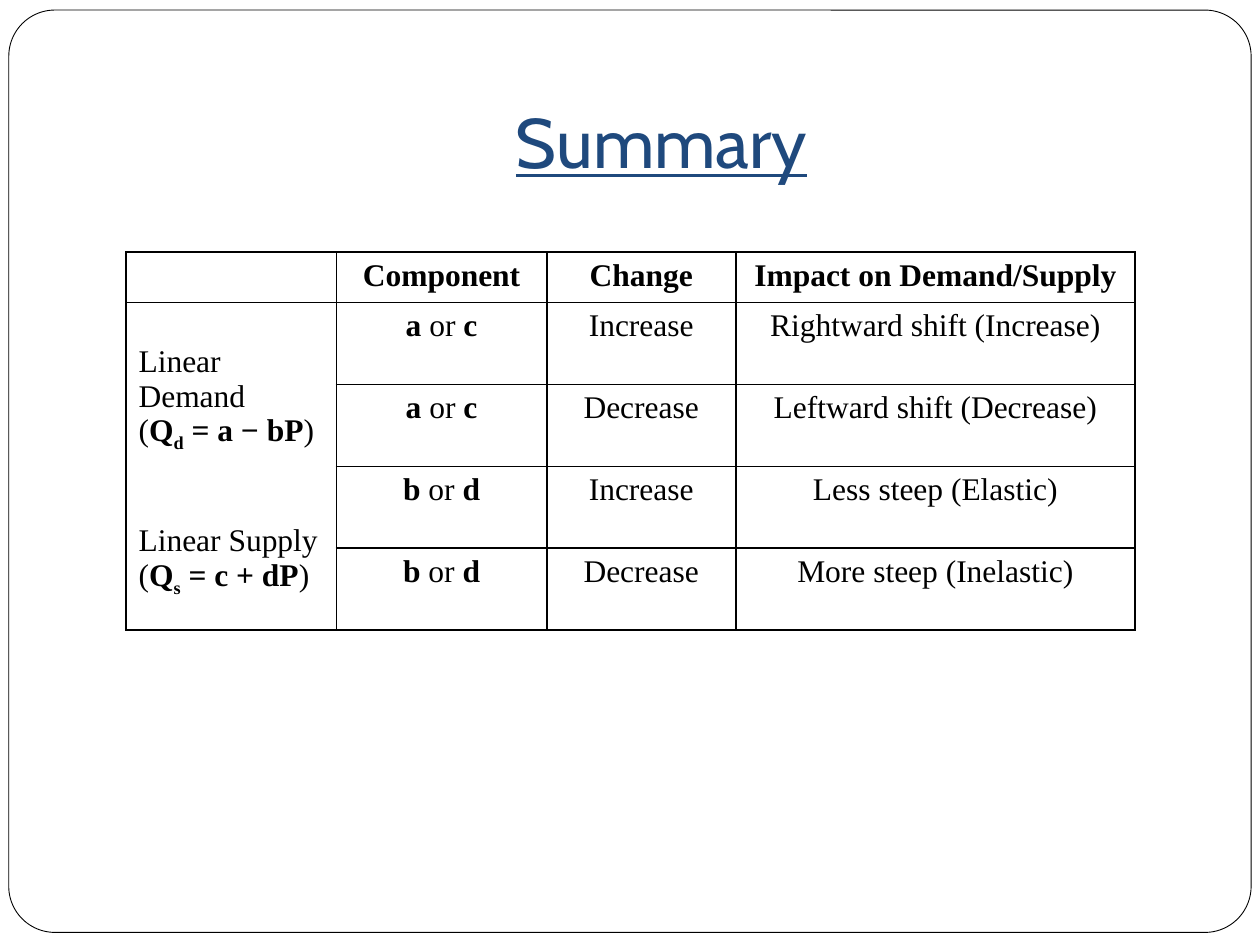
from lxml import etree
from pptx import Presentation
from pptx.dml.color import RGBColor
from pptx.enum.shapes import MSO_SHAPE
from pptx.enum.text import MSO_ANCHOR, PP_ALIGN
from pptx.oxml.ns import qn
from pptx.util import Inches, Pt

ROUNDED = MSO_SHAPE.ROUNDED_RECTANGLE
BOTTOM = MSO_ANCHOR.BOTTOM
LEFT, CENTER = PP_ALIGN.LEFT, PP_ALIGN.CENTER
WHITE = RGBColor(0xFF, 0xFF, 0xFF)
BLACK = RGBColor(0, 0, 0)
NAVY = RGBColor(0x1F, 0x49, 0x7D)

PLAIN, BOLD, SUBSCRIPT = "plain", "bold", "subscript"
HEADINGS = ["Component", "Change", "Impact on Demand/Supply"]
CHANGES = [
    ("a", "c", "Increase", "Rightward shift (Increase)"),
    ("a", "c", "Decrease", "Leftward shift (Decrease)"),
    ("b", "d", "Increase", "Less steep (Elastic)"),
    ("b", "d", "Decrease", "More steep (Inelastic)"),
]
EQUATIONS = [("Linear Demand", "d", " = a − bP"), ("Linear Supply", "s", " = c + dP")]


class SummarySlide:
    """Holds the slide and its style, and draws each kind of element."""

    title_font = "Cabin"
    table_font = "Times New Roman"
    table_size = Pt(18)

    def __init__(self, deck):
        self.slide = deck.slides.add_slide(deck.slide_layouts[6])

    def frame(self, left, top, width, height):
        shape = self.slide.shapes.add_shape(
            ROUNDED, Inches(left), Inches(top), Inches(width), Inches(height))
        shape.adjustments[0] = 0.05
        shape.shadow.inherit = False
        shape.fill.solid()
        shape.fill.fore_color.rgb = WHITE
        shape.line.color.rgb = BLACK
        shape.line.width = Pt(0.5)

    def title(self, text, left, top, width, height):
        box = self.slide.shapes.add_textbox(
            Inches(left), Inches(top), Inches(width), Inches(height))
        text_frame = box.text_frame
        text_frame.word_wrap = True
        text_frame.vertical_anchor = BOTTOM
        text_frame.margin_bottom = Inches(0.1)
        text_frame.text = text
        para = text_frame.paragraphs[0]
        para.alignment = CENTER
        font = para.runs[0].font
        font.name, font.size, font.underline = self.title_font, Pt(40), True
        font.color.rgb = NAVY

    def table(self, left, top, widths, heights):
        table = self.slide.shapes.add_table(
            len(heights), len(widths), Inches(left), Inches(top),
            Inches(sum(widths)), Inches(sum(heights))).table
        table.first_row = table.horz_banding = False
        for column, width in zip(table.columns, widths):
            column.width = Inches(width)
        for row, height in zip(table.rows, heights):
            row.height = Inches(height)
        for cell in table.iter_cells():
            self.borders(cell)
            cell.fill.background()
        return table

    def borders(self, cell):
        properties = cell._tc.get_or_add_tcPr()
        for side in ("a:lnL", "a:lnR", "a:lnT", "a:lnB"):
            line = etree.SubElement(properties, qn(side), w=str(Pt(1)))
            fill = etree.SubElement(line, qn("a:solidFill"))
            etree.SubElement(fill, qn("a:srgbClr"), val=str(BLACK))

    def spans(self, para, pieces, alignment=CENTER):
        para.alignment = alignment
        for text, style in pieces:
            span = para.add_run()
            span.text = text
            font = span.font
            font.name, font.size = self.table_font, self.table_size
            font.bold = style != PLAIN
            font.color.rgb = BLACK
            if style == SUBSCRIPT:
                font._element.set("baseline", "-25000")

    def equations(self, cell):
        cell.margin_top = Inches(0.33)
        text_frame = cell.text_frame
        for index, (name, subscript, formula) in enumerate(EQUATIONS):
            para = text_frame.add_paragraph() if index else text_frame.paragraphs[0]
            if index:
                para.space_before = Pt(40)
            self.spans(para, [(name, PLAIN)], LEFT)
            self.spans(text_frame.add_paragraph(), [
                ("(", PLAIN), ("Q", BOLD), (subscript, SUBSCRIPT),
                (formula, BOLD), (")", PLAIN)], LEFT)


def main():
    deck = Presentation()
    deck.slide_width, deck.slide_height = Inches(10), Inches(7.5)
    page = SummarySlide(deck)
    page.frame(0.07, 0.08, 9.86, 7.32)
    page.title("Summary", 1, 0.3, 8.5, 1.25)

    table = page.table(1, 2, [1.67, 1.67, 1.5, 3.17], [0.37] + [0.65] * len(CHANGES))
    rows = [[[(heading, BOLD)] for heading in HEADINGS]]
    for first, second, change, impact in CHANGES:
        component = [(first, BOLD), (" or ", PLAIN), (second, BOLD)]
        rows.append([component, [(change, PLAIN)], [(impact, PLAIN)]])
    for row, entries in enumerate(rows):
        for column, pieces in enumerate(entries, 1):
            page.spans(table.cell(row, column).text_frame.paragraphs[0], pieces)

    equation_cell = table.cell(1, 0)
    equation_cell.merge(table.cell(len(CHANGES), 0))
    page.equations(equation_cell)
    deck.save("out.pptx")


if __name__ == "__main__":
    main()
